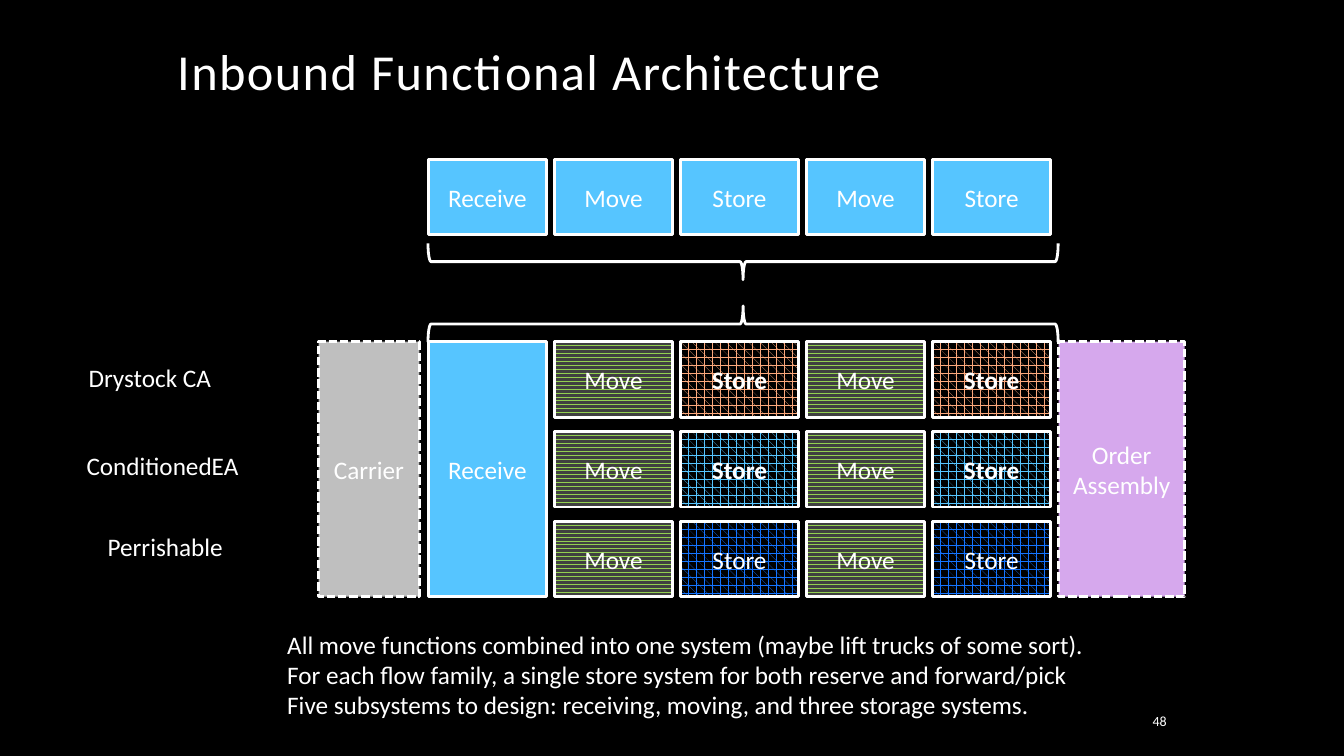
from pptx import Presentation
from pptx.dml.color import RGBColor
from pptx.enum.dml import MSO_LINE, MSO_PATTERN
from pptx.enum.shapes import MSO_SHAPE
from pptx.enum.text import MSO_ANCHOR, PP_ALIGN
from pptx.util import Emu, Pt

RECT, BRACE = MSO_SHAPE.RECTANGLE, MSO_SHAPE.LEFT_BRACE
WAVE, PLAID = MSO_PATTERN.WAVE, MSO_PATTERN.PLAID
DASH = MSO_LINE.SQUARE_DOT
TOP, MIDDLE = MSO_ANCHOR.TOP, MSO_ANCHOR.MIDDLE
LEFT, CENTER, RIGHT = PP_ALIGN.LEFT, PP_ALIGN.CENTER, PP_ALIGN.RIGHT

BLACK = RGBColor(0x00, 0x00, 0x00)
WHITE = RGBColor(0xFF, 0xFF, 0xFF)
GRAY = RGBColor(0xBF, 0xBF, 0xBF)
DARK = RGBColor(0x40, 0x40, 0x40)
SKY = RGBColor(0x56, 0xC5, 0xFF)
BLUE = RGBColor(0x14, 0x74, 0xFF)
GREEN = RGBColor(0x92, 0xD0, 0x50)
PEACH = RGBColor(0xFB, 0xA8, 0x7C)
LILAC = RGBColor(0xD6, 0xA8, 0xED)

SCALE = 9144
LEFT_X, STEP, WIDTH, HEIGHT = 425, 125, 117, 75
CHAIN_Y, FLOW_Y, ROW_STEP = 158, 339, 89
TALL = 2 * ROW_STEP + HEIGHT


def px(*sizes):
    return [Emu(size * SCALE) for size in sizes]


class Board:
    """Draws styled elements on one slide, with lengths in px."""

    def __init__(self, slide, font="Calibri", color=WHITE, size=18):
        self.slide, self.font, self.color, self.size = slide, font, color, size
        back = slide.background.fill
        back.solid()
        back.fore_color.rgb = BLACK

    def add_words(self, para, words, size=None, bold=False):
        run = para.add_run()
        run.text = words
        run.font.name = self.font
        run.font.size = Pt(size or self.size)
        run.font.color.rgb = self.color
        run.font.bold = bold

    def text(self, x, y, w, h, lines, size=None, align=LEFT, anchor=TOP, wrap=True):
        frame = self.slide.shapes.add_textbox(*px(x, y, w, h)).text_frame
        frame.word_wrap = wrap
        frame.vertical_anchor = anchor
        for i, line in enumerate(lines):
            para = frame.add_paragraph() if i else frame.paragraphs[0]
            para.alignment = align
            self.add_words(para, line, size)
        return frame.paragraphs[0]

    def title(self, x, y, w, h, words):
        para = self.text(x, y, w, h, [words], size=36)
        para.line_spacing = 0.9
        para.runs[0].font._element.set("spc", "100")

    def shape(self, kind, x, y, w, h):
        shape = self.slide.shapes.add_shape(kind, *px(x, y, w, h))
        shape.shadow.inherit = False
        shape.line.color.rgb = self.color
        shape.line.width = Pt(2)
        return shape

    def box(self, x, y, w, h, words, fore, back=None, pattern=None, bold=False, dash=None):
        box = self.shape(RECT, x, y, w, h)
        if pattern:
            box.fill.patterned()
            box.fill.pattern = pattern
            box.fill.back_color.rgb = back
        else:
            box.fill.solid()
        box.fill.fore_color.rgb = fore
        if dash:
            box.line.dash_style = dash
        box.text_frame.word_wrap = True
        box.text_frame.vertical_anchor = MIDDLE
        para = box.text_frame.paragraphs[0]
        para.alignment = CENTER
        self.add_words(para, words, bold=bold)

    def brace(self, x, y, w, h, turn):
        brace = self.shape(BRACE, x, y, w, h)
        brace.fill.background()
        brace.rotation = turn


def main():
    deck = Presentation()
    deck.slide_width, deck.slide_height = px(1333, 750)
    board = Board(deck.slides.add_slide(deck.slide_layouts[6]))
    board.title(166, 42, 1000, 150, "Inbound Functional Architecture")

    for i, step in enumerate(["Receive", "Move", "Store", "Move", "Store"]):
        board.box(LEFT_X + i * STEP, CHAIN_Y, WIDTH, HEIGHT, step, SKY)
    board.brace(719, -53, 36, 625, 270)
    board.brace(719, 9, 36, 625, 90)

    board.box(316, FLOW_Y, 100, TALL, "Carrier", GRAY, dash=DASH)
    board.box(LEFT_X, FLOW_Y, WIDTH, TALL, "Receive", SKY)
    for row, (hue, bold) in enumerate([(PEACH, True), (SKY, True), (BLUE, False)]):
        y = FLOW_Y + row * ROW_STEP
        for col in (1, 3):
            x = LEFT_X + col * STEP
            board.box(x, y, WIDTH, HEIGHT, "Move", GREEN, DARK, WAVE)
            board.box(x + STEP, y, WIDTH, HEIGHT, "Store", hue, BLACK, PLAID, bold)
    board.box(LEFT_X + 5 * STEP, FLOW_Y, 125, TALL, "Order Assembly", LILAC, dash=DASH)

    for x, y, w, label in [
        (78, 355, 148, "Drystock CA"),
        (76, 442, 178, "ConditionedEA"),
        (97, 522, 137, "Perrishable"),
    ]:
        board.text(x, y, w, 40, [label], wrap=False)
    board.text(275, 619, 892, 101, [
        "All move functions combined into one system (maybe lift trucks of some sort).",
        "For each flow family, a single store system for both reserve and forward/pick",
        "Five subsystems to design: receiving, moving, and three storage systems.",
    ])
    board.text(1075, 700, 92, 30, ["48"], size=10, align=RIGHT, anchor=MIDDLE)
    deck.save("out.pptx")


if __name__ == "__main__":
    main()
